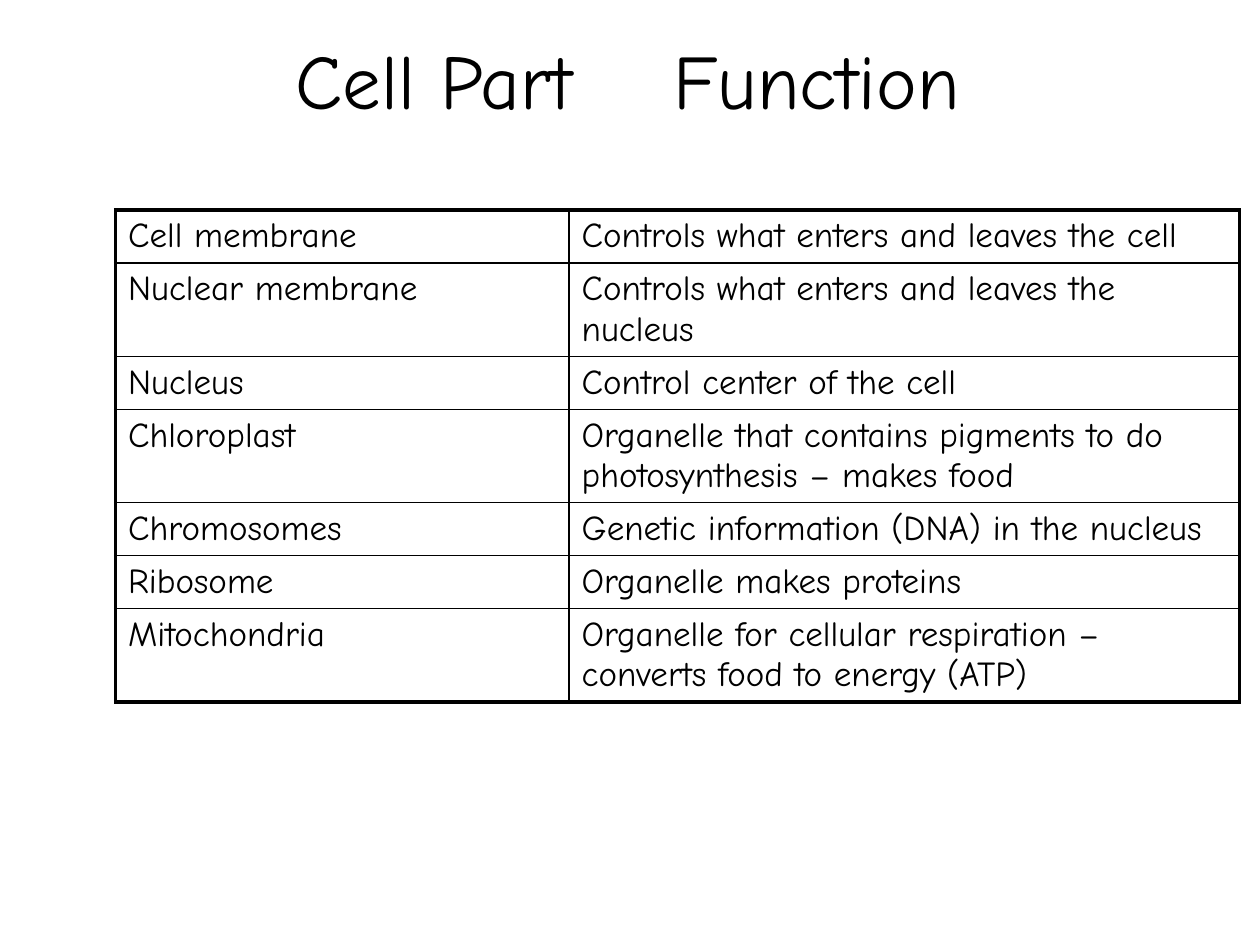
from lxml import etree
from pptx import Presentation
from pptx.dml.color import RGBColor
from pptx.enum import text
from pptx.oxml import ns
from pptx.util import Pt

HEADING = "Cell Part\t\tFunction "
CELL_PARTS = [
    ("Cell membrane", "Controls what enters and leaves the cell", 1),
    ("Nuclear membrane", "Controls what enters and leaves the nucleus", 2),
    ("Nucleus", "Control center of the cell", 1),
    ("Chloroplast", "Organelle that contains pigments to do photosynthesis – makes food", 2),
    ("Chromosomes", "Genetic information (DNA) in the nucleus", 1),
    ("Ribosome", "Organelle makes proteins", 1),
    ("Mitochondria", "Organelle for cellular respiration – converts food to energy (ATP)", 2),
]
COLORS = {"ink": "000000", "paper": "FFFFFF"}
HEADING_FONT = {"name": "Comic Neue", "size": Pt(44), "bold": False}
CELL_FONT = {"name": "Comic Neue", "size": Pt(20), "bold": False}
HEADING_BOX = {"left": Pt(42), "top": Pt(24), "width": Pt(648), "height": Pt(42)}
HEADING_FRAME = {
    "word_wrap": True,
    "auto_size": text.MSO_AUTO_SIZE.NONE,
    "vertical_anchor": text.MSO_ANCHOR.MIDDLE,
}
TABLE_LEFT, TABLE_TOP = 66, 120
COLUMN_WIDTHS = (259.2, 383)
LINE_HEIGHT, ROW_PADDING = 23, 7.25
OUTER_BORDER, INNER_BORDER = 2.25, 1


def apply(target, values):
    for key, value in values.items():
        setattr(target, key, value)


def style_font(font, values):
    apply(font, values)
    font.color.rgb = RGBColor.from_string(COLORS["ink"])


def add_borders(cell, outer_sides):
    properties = cell._tc.get_or_add_tcPr()
    for index, (side, is_outer) in enumerate(outer_sides.items()):
        width = OUTER_BORDER if is_outer else INNER_BORDER
        border = etree.Element(ns.qn(f"a:ln{side}"), w=str(Pt(width)))
        fill = etree.SubElement(border, ns.qn("a:solidFill"))
        etree.SubElement(fill, ns.qn("a:srgbClr"), val=COLORS["ink"])
        properties.insert(index, border)


def add_heading(slide):
    heading = slide.shapes.title
    apply(heading, HEADING_BOX)
    apply(heading.text_frame, HEADING_FRAME)
    heading.text_frame.text = HEADING
    line = heading.text_frame.paragraphs[0]
    line.alignment = text.PP_ALIGN.CENTER
    style_font(line.runs[0].font, HEADING_FONT)


def add_cell_parts(slide):
    heights = [lines * LINE_HEIGHT + ROW_PADDING for _, _, lines in CELL_PARTS]
    last_row, last_column = len(CELL_PARTS) - 1, len(COLUMN_WIDTHS) - 1
    table = slide.shapes.add_table(
        len(CELL_PARTS), len(COLUMN_WIDTHS), Pt(TABLE_LEFT), Pt(TABLE_TOP),
        Pt(sum(COLUMN_WIDTHS)), Pt(sum(heights)),
    ).table
    apply(table, {"first_row": False, "horz_banding": False})
    for column, width in zip(table.columns, COLUMN_WIDTHS):
        column.width = Pt(width)
    for r, (part, function, _) in enumerate(CELL_PARTS):
        table.rows[r].height = Pt(heights[r])
        for c, wording in enumerate((part, function)):
            cell = table.cell(r, c)
            cell.text = wording
            style_font(cell.text_frame.paragraphs[0].runs[0].font, CELL_FONT)
            cell.fill.solid()
            cell.fill.fore_color.rgb = RGBColor.from_string(COLORS["paper"])
            add_borders(cell, {"L": c == 0, "R": c == last_column,
                               "T": r == 0, "B": r == last_row})


def main():
    deck = Presentation()
    apply(deck, {"slide_width": Pt(720), "slide_height": Pt(540)})
    slide = deck.slides.add_slide(deck.slide_layouts[5])
    add_heading(slide)
    add_cell_parts(slide)
    deck.save("out.pptx")


if __name__ == "__main__":
    main()
